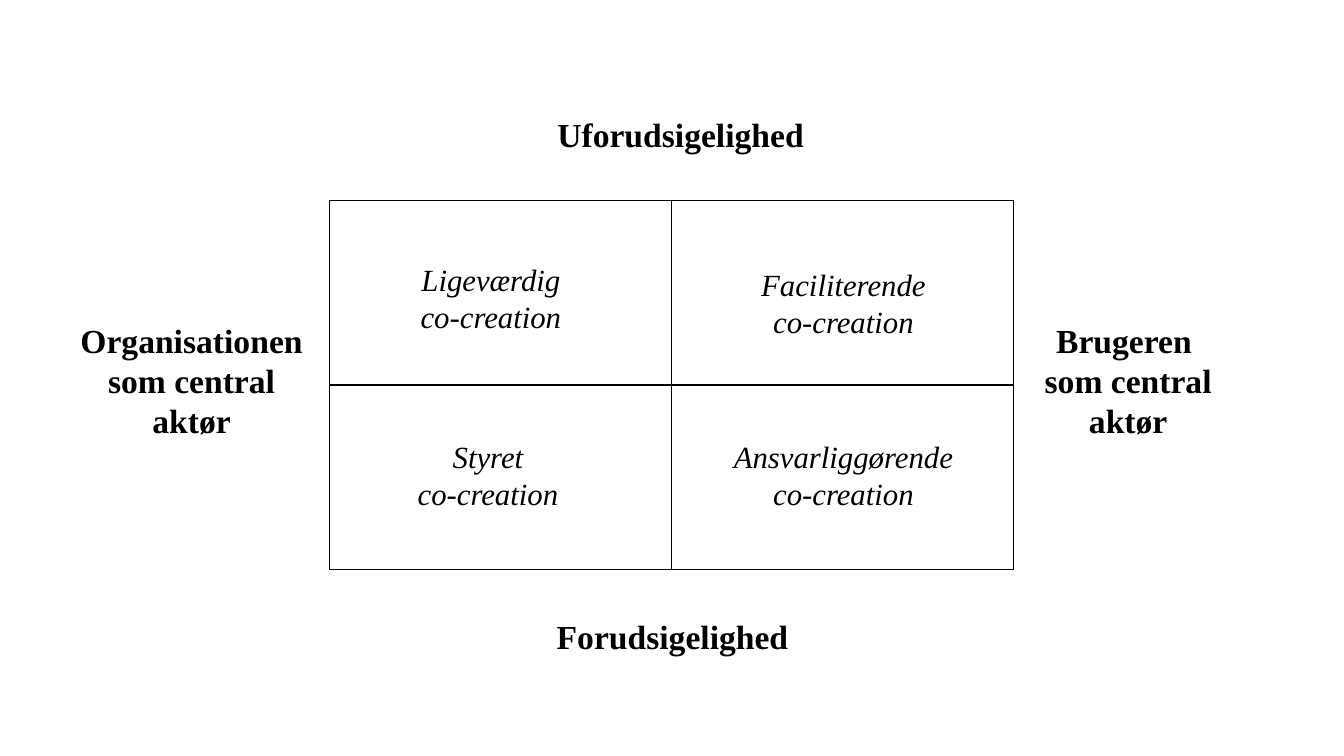
from dataclasses import dataclass

from lxml.etree import SubElement
from pptx import Presentation
from pptx.dml.color import RGBColor
from pptx.enum.text import MSO_AUTO_SIZE as Auto, PP_ALIGN as Align
from pptx.oxml.ns import qn
from pptx.util import Inches, Pt


@dataclass(frozen=True)
class Theme:
    font: str = "Times New Roman"
    ink: str = "000000"
    axis_size: int = 24
    quadrant_size: int = 22
    border: int = 1


class Deck:
    """Draw elements on one slide, with lengths in percent of its size."""

    def __init__(self, prs, theme):
        self.prs, self.theme = prs, theme
        self.s = prs.slides.add_slide(prs.slide_layouts[6])

    def box(self, x, y, w, h):
        cw, rh = self.prs.slide_width / 100, self.prs.slide_height / 100
        return [round(v) for v in (x * cw, y * rh, w * cw, h * rh)]

    def text(self, lines, at, **fmt):
        tf = self.s.shapes.add_textbox(*self.box(*at)).text_frame
        tf.word_wrap = True
        tf.auto_size = Auto.SHAPE_TO_FIT_TEXT
        for i, line in enumerate(lines):
            p = tf.add_paragraph() if i else tf.paragraphs[0]
            p.alignment = Align.CENTER
            r = p.add_run()
            r.text = line
            for name, value in {"name": self.theme.font, **fmt}.items():
                setattr(r.font, name, value)
            r.font.color.rgb = RGBColor.from_string(self.theme.ink)

    def axis(self, lines, at):
        self.text(lines, at, size=Pt(self.theme.axis_size), bold=True)

    def quadrant(self, kind, at):
        self.text([kind, "co-creation"], at,
                  size=Pt(self.theme.quadrant_size), italic=True)

    def matrix(self, rows, cols, at):
        tbl = self.s.shapes.add_table(rows, cols, *self.box(*at)).table
        for flag in ("first_row", "horz_banding"):
            setattr(tbl, flag, False)
        for cell in tbl.iter_cells():
            tc_pr = cell._tc.get_or_add_tcPr()
            for side in ("a:lnL", "a:lnR", "a:lnT", "a:lnB"):
                ln = SubElement(tc_pr, qn(side), w=str(Pt(self.theme.border)))
                fill = SubElement(ln, qn("a:solidFill"))
                SubElement(fill, qn("a:srgbClr"), val=self.theme.ink)
            cell.fill.background()


def main():
    prs = Presentation()
    prs.slide_width, prs.slide_height = Inches(13.33), Inches(7.5)
    deck = Deck(prs, Theme())
    deck.matrix(2, 2, (24.53, 26.53, 50.86, 48.8))
    for kind, x, y, w in (
        ("Styret", 28.51, 57.2, 15.6),
        ("Ansvarliggørende", 53.19, 57.2, 19.13),
        ("Ligeværdig", 28.73, 33.87, 15.6),
        ("Faciliterende", 53.19, 34.53, 19.13),
    ):
        deck.quadrant(kind, (x, y, w, 11.2))
    for lines, at in (
        (["Uforudsigelighed"], (40.66, 14.4, 19.95, 6.67)),
        (["Forudsigelighed"], (40.06, 80.8, 19.95, 6.67)),
        (["Organisationen som central aktør"], (4.65, 41.6, 19.2, 17.47)),
        (["Brugeren ", "som central aktør"], (74.04, 41.6, 19.8, 17.47)),
    ):
        deck.axis(lines, at)
    prs.save("out.pptx")


if __name__ == "__main__":
    main()
